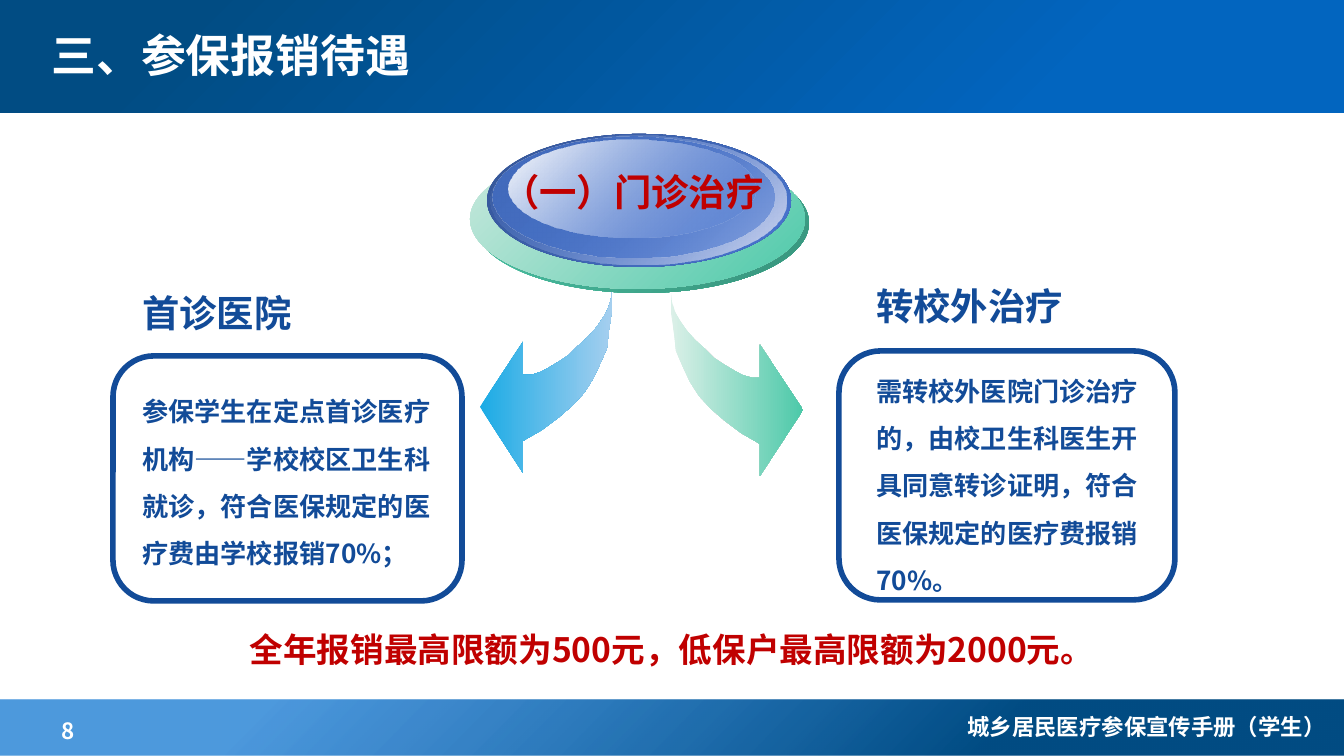
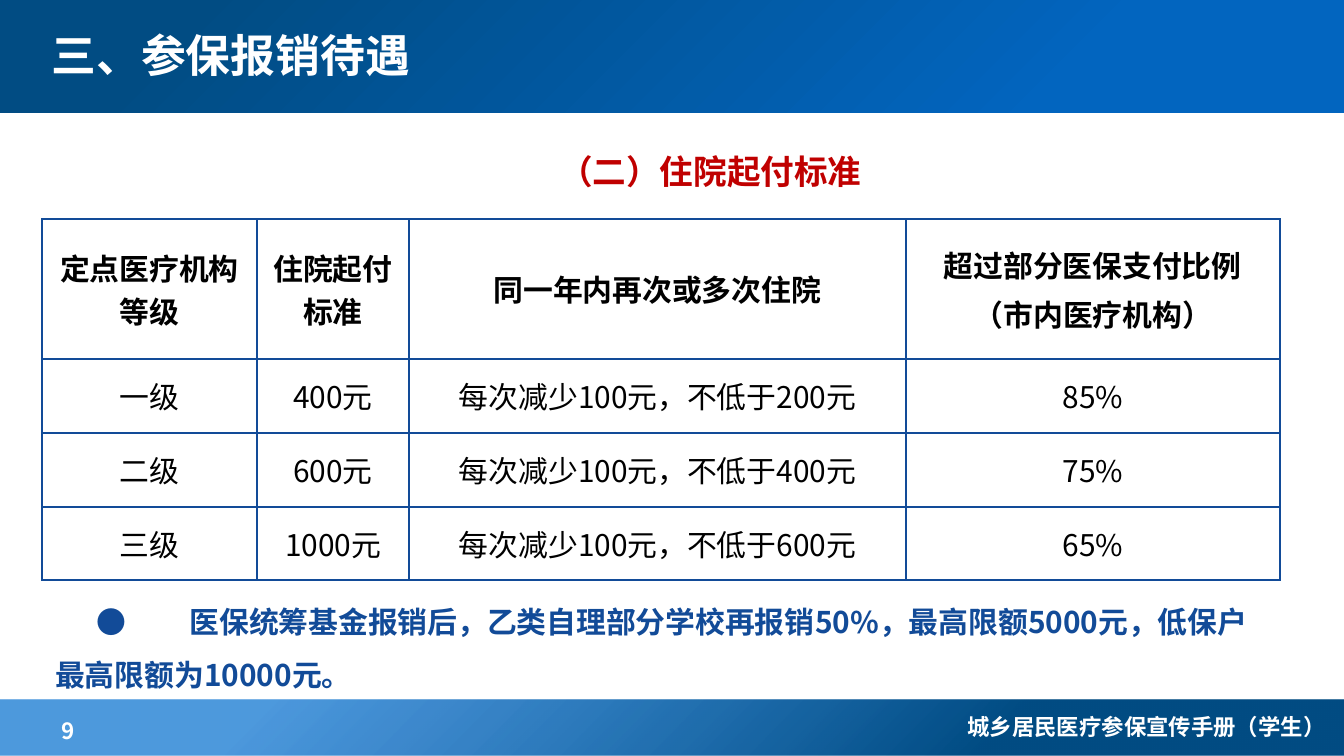
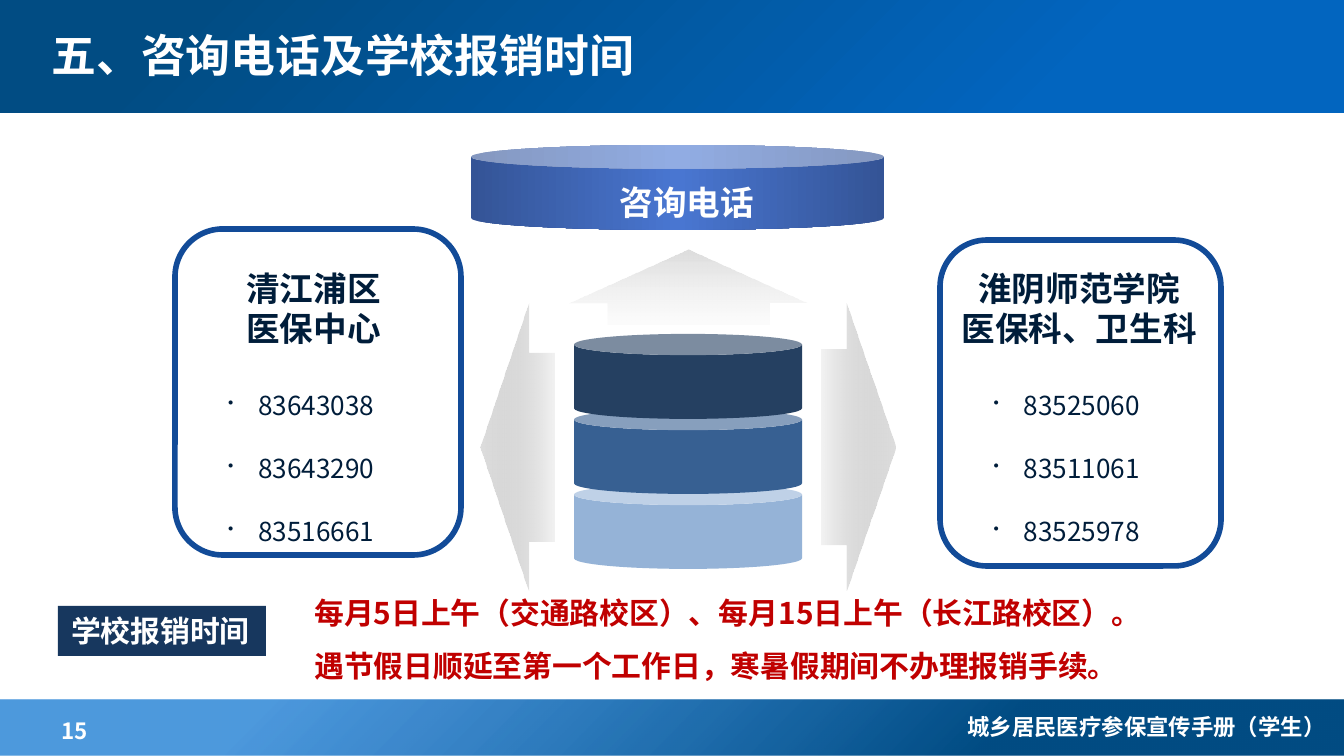
import pptx
import pptx.util
import pptx.dml.color
import pptx.enum.shapes
import pptx.enum.text
import pptx.oxml
import pptx.oxml.ns
from lxml import etree

EMU_PER_PX = 914400 / 134.4
FONT = "Noto Sans CJK SC"
TITLE_FONT = "Times New Roman"
COLORS = {
    "white": "FFFFFF", "black": "000000", "red": "C00000", "blue": "124B98",
    "navy": "001D3A", "label": "17375E", "band_dark": "014C83",
    "band_mid": "0265BF", "band_light": "026DCE", "sky": "1BABE5",
    "pale_sky": "A5CFEF", "green": "4DC9A9", "deep_green": "38937C",
    "mint": "CAE9DE", "pale_mint": "DBF0E8", "royal": "4976D1",
    "royal_mid": "426BBD", "royal_dark": "345496", "lilac": "D6DCF0",
    "drum_top": "254061", "drum_mid": "376092", "drum_low": "95B3D7",
    "silver": "DDDDDD", "grey": "9E9E9E", "pale_grey": "EAEAEA",
}
SHAPE = pptx.enum.shapes.MSO_SHAPE
ALIGN = pptx.enum.text.PP_ALIGN
ANCHOR = pptx.enum.text.MSO_ANCHOR
A_NS = pptx.oxml.ns.nsdecls("a")
qn = pptx.oxml.ns.qn

ARROW_OUTLINE = [
    (0, 0), (0, 20), (3, 40), (5, 58), (12, 74), (19, 89), (28, 103), (40, 116),
    (54, 128), (70, 140), (89, 151), (89, 183), (132, 117), (89, 52), (89, 85),
    (81, 85), (71, 82), (62, 77), (52, 71), (43, 65), (34, 56), (24, 47),
    (16, 38), (9, 28), (4, 19), (1, 9),
]


def px(length):
    return pptx.util.Emu(round(length * EMU_PER_PX))


def rgb(color):
    return pptx.dml.color.RGBColor.from_string(COLORS[color])


def fill_gradient(shape, stops, angle=None):
    stop_xml = "".join(
        f'<a:gs pos="{position * 1000}"><a:srgbClr val="{COLORS[color]}">'
        f'<a:alpha val="{opacity * 1000}"/></a:srgbClr></a:gs>'
        for position, color, opacity in stops)
    if angle is None:
        direction = '<a:path path="circle"><a:fillToRect l="100000" t="100000"/></a:path>'
    else:
        direction = f'<a:lin ang="{angle * 60000}" scaled="0"/>'
    gradient = pptx.oxml.parse_xml(
        f'<a:gradFill {A_NS} rotWithShape="1"><a:gsLst>{stop_xml}</a:gsLst>{direction}</a:gradFill>')
    shape.fill.background()
    properties = shape.element.spPr
    properties.replace(properties.find(qn("a:noFill")), gradient)


def paint(shape, fill, angle=None):
    shape.shadow.inherit = False
    shape.line.fill.background()
    if isinstance(fill, str):
        shape.fill.solid()
        shape.fill.fore_color.rgb = rgb(fill)
    else:
        fill_gradient(shape, fill, angle)


def add_figure(slide, kind, box, fill, angle=None, adjustments=()):
    figure = slide.shapes.add_shape(kind, *map(px, box))
    for index, value in enumerate(adjustments):
        figure.adjustments[index] = value
    paint(figure, fill, angle)
    return figure


def add_frame(slide, box):
    frame = slide.shapes.add_shape(SHAPE.ROUNDED_RECTANGLE, *map(px, box))
    frame.shadow.inherit = False
    frame.fill.background()
    frame.line.color.rgb = rgb("blue")
    frame.line.width = pptx.util.Pt(3)


def format_paragraph(paragraph, size, color, bold=True, align=ALIGN.LEFT,
                     spacing=None, before=None, font=FONT):
    paragraph.alignment = align
    if spacing:
        paragraph.line_spacing = spacing
    if before:
        paragraph.space_before = pptx.util.Pt(before)
    paragraph.font.name = font
    paragraph.font.size = pptx.util.Pt(size)
    paragraph.font.bold = bold
    paragraph.font.color.rgb = rgb(color)
    defaults = paragraph._p.get_or_add_pPr().find(qn("a:defRPr"))
    etree.SubElement(defaults, qn("a:ea"), typeface=FONT)


def add_bullet(paragraph):
    properties = paragraph._p.get_or_add_pPr()
    properties.set("marL", str(px(4)))
    properties.set("indent", str(-px(30)))
    etree.SubElement(properties, qn("a:buSzPct"), val="60000")
    etree.SubElement(properties, qn("a:buChar"), char="•")


def add_first_line_tab(paragraph, indent, stop):
    properties = paragraph._p.get_or_add_pPr()
    properties.set("marL", "0")
    properties.set("indent", str(px(indent)))
    tabs = etree.SubElement(properties, qn("a:tabLst"))
    etree.SubElement(tabs, qn("a:tab"), pos=str(px(stop)), algn="l")


def write(frame, lines):
    for index, (text, style) in enumerate(lines):
        paragraph = frame.add_paragraph() if index else frame.paragraphs[0]
        paragraph.text = text
        style = dict(style)
        if style.pop("bullet", False):
            add_bullet(paragraph)
        if "tab" in style:
            add_first_line_tab(paragraph, *style.pop("tab"))
        format_paragraph(paragraph, **style)


def add_text(slide, box, lines, wrap=True):
    textbox = slide.shapes.add_textbox(*map(px, box))
    textbox.text_frame.word_wrap = wrap
    write(textbox.text_frame, lines)
    return textbox


def build_shared_layout(layout, slide):
    for placeholder in list(layout.placeholders):
        if placeholder.placeholder_format.idx >= 10:
            layout.shapes.element.remove(placeholder.element)
    footer_band = add_figure(slide, SHAPE.RECTANGLE, (0, 700, 1344, 56),
                             [(26, "band_dark", 100), (80, "band_light", 70)])
    title_band = add_figure(slide, SHAPE.RECTANGLE, (0, -4, 1348, 117),
                            [(21, "band_mid", 100), (86, "band_dark", 100)])
    booklet_name = add_text(slide, (926, 707, 413, 35), [
        ("城乡居民医疗参保宣传手册（学生）",
         dict(size=12, color="white", align=ALIGN.RIGHT))])
    for position, part in enumerate((footer_band, title_band, booklet_name), 2):
        layout.shapes.element.insert(position, part.element)


def set_heading(slide, heading, number):
    title = slide.shapes.title
    title.left, title.top, title.width, title.height = map(px, (38, 7, 857, 95))
    title.text_frame.auto_size = pptx.enum.text.MSO_AUTO_SIZE.NONE
    title.text_frame.vertical_anchor = ANCHOR.MIDDLE
    write(title.text_frame, [(heading, dict(size=24, color="white", font=TITLE_FONT))])
    add_text(slide, (48, 711, 206, 35), [(str(number), dict(size=12, color="white"))])


def add_curved_arrow(slide, start, direction, stops):
    x, y = start
    points = [(x + direction * dx, y + dy) for dx, dy in ARROW_OUTLINE]
    builder = slide.shapes.build_freeform(*points[0], scale=EMU_PER_PX)
    builder.add_line_segments(points[1:], close=True)
    paint(builder.convert_to_shape(), stops, 0)


def add_treatment(slide, frame_box, text_box, heading, rule, gap):
    add_frame(slide, frame_box)
    add_text(slide, text_box, [
        (heading, dict(size=20, color="blue")),
        (rule, dict(size=14, color="blue", spacing=1.5, before=gap))])


def add_contact(slide, frame_box, text_box, office, phones):
    add_frame(slide, frame_box)
    lines = [(line, dict(size=18, color="navy", align=ALIGN.CENTER)) for line in office]
    lines += [(phone, dict(size=14, color="navy", bold=False, align=ALIGN.CENTER,
                           before=17 if index else 22, bullet=True))
              for index, phone in enumerate(phones)]
    add_text(slide, text_box, lines)


def set_borders(cell, color, width):
    properties = cell._tc.get_or_add_tcPr()
    for position, side in enumerate(("lnL", "lnR", "lnT", "lnB")):
        properties.insert(position, pptx.oxml.parse_xml(
            f'<a:{side} {A_NS} w="{pptx.util.Pt(width)}"><a:solidFill>'
            f'<a:srgbClr val="{COLORS[color]}"/></a:solidFill></a:{side}>'))


def add_rate_table(slide, left, top, widths, heights, rows):
    table = slide.shapes.add_table(len(rows), len(widths), px(left), px(top),
                                   px(sum(widths)), px(sum(heights))).table
    table.first_row = table.horz_banding = False
    for column, width in zip(table.columns, widths):
        column.width = px(width)
    for row, height in zip(table.rows, heights):
        row.height = px(height)
    for r, row in enumerate(rows):
        for c, text in enumerate(row):
            cell = table.cell(r, c)
            cell.fill.background()
            cell.vertical_anchor = ANCHOR.MIDDLE
            write(cell.text_frame, [
                (line, dict(size=16, color="black", bold=r == 0, align=ALIGN.CENTER,
                            before=3 if index else None))
                for index, line in enumerate(text.split("\n"))])
            set_borders(cell, "blue", 1)


def build_outpatient(slide):
    set_heading(slide, "三、参保报销待遇", 8)
    add_treatment(slide, (113, 356, 349, 245), (129, 284, 319, 336), "首诊医院",
                  "参保学生在定点首诊医疗机构——学校校区卫生科就诊，符合医保规定的医疗费由学校报销70%；", 24)
    add_curved_arrow(slide, (612, 290), -1, [(0, "sky", 100), (100, "pale_sky", 100)])
    medallion = [
        ((474, 153, 335, 140), ("green", 100), ("deep_green", 100)),
        ((470, 149, 335, 140), ("mint", 100), ("green", 100)),
        ((487, 134, 304, 133), ("royal_dark", 100), ("royal", 100)),
        ((491, 136, 296, 129), ("royal", 0), ("lilac", 100)),
        ((493, 137, 281, 121), ("royal_mid", 100), ("royal", 48)),
        ((509, 140, 247, 98), ("white", 100), ("royal", 38)),
    ]
    for box, start, end in medallion:
        add_figure(slide, SHAPE.OVAL, box, [(0, *start), (100, *end)], 45)
    add_text(slide, (480, 163, 306, 59), [
        ("（一）门诊治疗", dict(size=20, color="red", align=ALIGN.CENTER))])
    add_treatment(slide, (839, 351, 336, 249), (863, 277, 300, 323), "转校外治疗",
                  "需转校外医院门诊治疗的，由校卫生科医生开具同意转诊证明，符合医保规定的医疗费报销70%。", 17)
    add_curved_arrow(slide, (671, 293), 1, [(0, "pale_mint", 100), (100, "green", 100)])
    add_text(slide, (0, 622, 1344, 54), [
        ("全年报销最高限额为500元，低保户最高限额为2000元。",
         dict(size=18, color="red", align=ALIGN.CENTER))])


def build_inpatient(slide):
    set_heading(slide, "三、参保报销待遇", 9)
    levels = [("一级", 400, 200, 85), ("二级", 600, 400, 75), ("三级", 1000, 600, 65)]
    rows = [("定点医疗机构等级", "住院起付标准", "同一年内再次或多次住院",
             "超过部分医保支付比例\n（市内医疗机构）")]
    rows += [(level, f"{deductible}元", f"每次减少100元，不低于{floor}元", f"{rate}%")
             for level, deductible, floor, rate in levels]
    add_rate_table(slide, 42, 219, (215, 152, 497, 374), (140, 74, 74, 73), rows)
    add_text(slide, (546, 144, 332, 54), [
        ("（二）住院起付标准", dict(size=18, color="red"))], wrap=False)
    add_text(slide, (42, 579, 1247, 122), [
        ("●\t医保统筹基金报销后，乙类自理部分学校再报销50%，最高限额5000元，低保户最高限额为10000元。",
         dict(size=16, color="blue", spacing=1.5, tab=(41, 91)))])


def build_contacts(slide):
    set_heading(slide, "五、咨询电话及学校报销时间", 15)
    add_contact(slide, (175, 229, 286, 326), (175, 261, 277, 294),
                ("清江浦区", "医保中心"), ("83643038", "83643290", "83516661"))
    add_contact(slide, (940, 240, 281, 326), (894, 261, 370, 294),
                ("淮阴师范学院", "医保科、卫生科"), ("83525060", "83511061", "83525978"))
    for index, color in enumerate(("drum_low", "drum_mid", "drum_top")):
        add_figure(slide, SHAPE.CAN, (574, 484 - 75 * index, 228, 85), color,
                   adjustments=(0.25,))
    add_figure(slide, SHAPE.LEFT_ARROW, (481, 304, 73, 287),
               [(0, "silver", 100), (100, "grey", 12)], 0, (0.66, 0.65))
    add_figure(slide, SHAPE.RIGHT_ARROW, (822, 304, 73, 287),
               [(0, "grey", 12), (100, "silver", 100)], 0, (0.68, 0.66))
    add_figure(slide, SHAPE.CAN, (471, 145, 413, 85),
               [(0, "royal_dark", 100), (50, "royal", 100), (100, "royal_dark", 100)],
               0, (0.28,))
    add_figure(slide, SHAPE.UP_ARROW, (570, 250, 237, 74),
               [(0, "silver", 100), (100, "pale_grey", 12)], 90, (0.68, 0.71))
    add_text(slide, (606, 175, 162, 54), [
        ("咨询电话", dict(size=18, color="white", align=ALIGN.CENTER))])
    schedule = ("每月5日上午（交通路校区）、每月15日上午（长江路校区）。",
                "遇节假日顺延至第一个工作日，寒暑假期间不办理报销手续。")
    add_text(slide, (301, 570, 1034, 116), [
        (line, dict(size=16, color="red", spacing=1.5)) for line in schedule])
    schedule_label = add_figure(slide, SHAPE.RECTANGLE, (58, 606, 208, 50), "label")
    schedule_label.text_frame.word_wrap = False
    write(schedule_label.text_frame, [("学校报销时间", dict(size=16, color="white"))])


def main():
    deck = pptx.Presentation()
    deck.slide_width, deck.slide_height = px(1344), px(756)
    layout = deck.slide_layouts[5]
    builders = (build_outpatient, build_inpatient, build_contacts)
    slides = [deck.slides.add_slide(layout) for _ in builders]
    build_shared_layout(layout, slides[0])
    for build, slide in zip(builders, slides):
        build(slide)
    deck.save("out.pptx")


if __name__ == "__main__":
    main()
